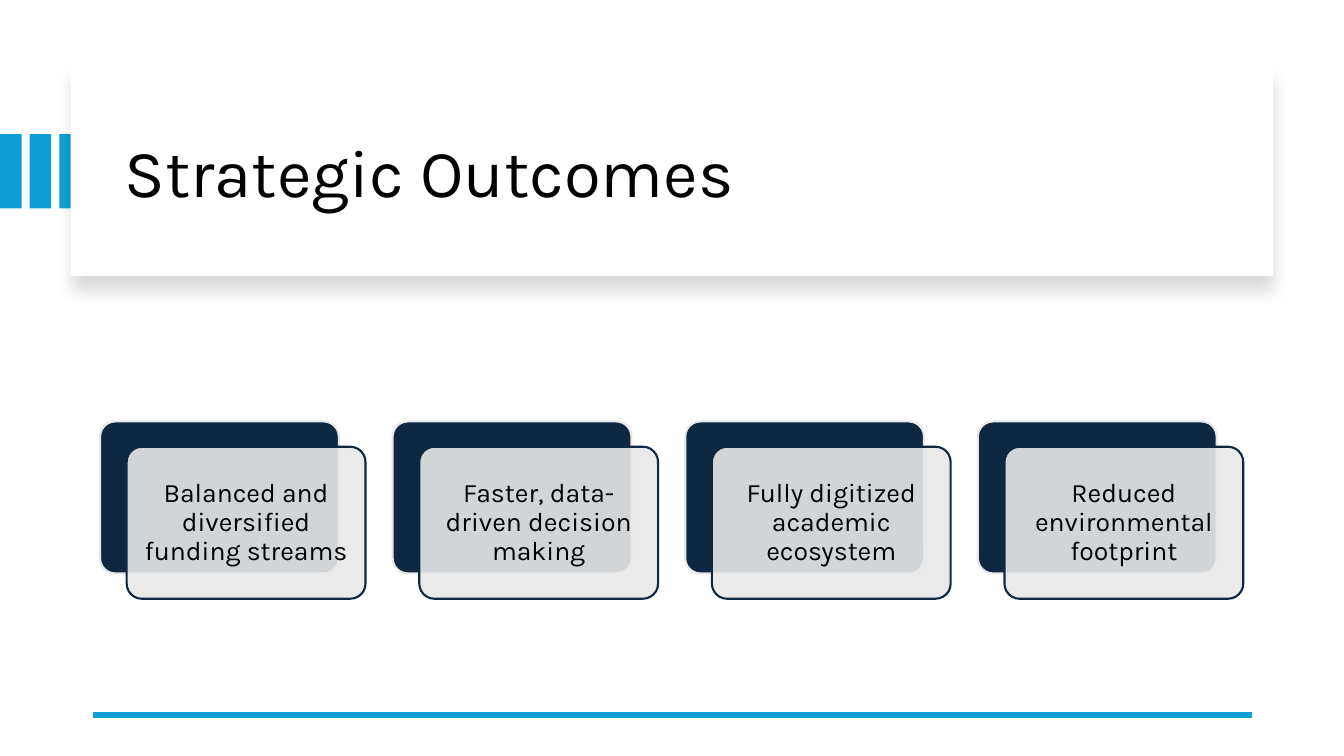
"""Build the Strategic Outcomes slide with four layered cards."""
from lxml.etree import SubElement
from pptx import Presentation
from pptx.dml.color import RGBColor
from pptx.enum.shapes import MSO_CONNECTOR, MSO_SHAPE
from pptx.enum.text import MSO_ANCHOR, PP_ALIGN
from pptx.oxml import parse_xml
from pptx.oxml.ns import nsdecls, qn
from pptx.util import Pt

TITLE = "Strategic Outcomes"
OUTCOMES = [
    "Balanced and diversified funding streams",
    "Faster, data-driven decision making",
    "Fully digitized academic ecosystem",
    "Reduced environmental footprint",
]

FONT = "Karla"
BLACK = RGBColor(0x00, 0x00, 0x00)
WHITE = RGBColor(0xFF, 0xFF, 0xFF)
BLUE = RGBColor(0x0F, 0x9E, 0xD5)
NAVY = RGBColor(0x0E, 0x28, 0x41)
GREY = RGBColor(0xE8, 0xE8, 0xE8)

STRIPE_COUNT, STRIPE_PITCH = 3, 21.2
CARD_LEFT, CARD_TOP, CARD_PITCH = 71.5, 301, 209
CARD_WIDTH, CARD_HEIGHT = 170.6, 108.6
FRONT_SHIFT_X, FRONT_SHIFT_Y = 19, 18.1
PANEL_SHADOW = (
    f'<a:effectLst {nsdecls("a")}>'
    f'<a:outerShdw blurRad="{Pt(11)}" dist="{Pt(10)}" dir="5400000" algn="t" rotWithShape="0">'
    '<a:srgbClr val="000000"><a:alpha val="15000"/></a:srgbClr>'
    "</a:outerShdw></a:effectLst>"
)


def add_box(slide, kind, left, top, width, height, fill, line=None):
    shape = slide.shapes.add_shape(kind, Pt(left), Pt(top), Pt(width), Pt(height))
    shape.shadow.inherit = False
    shape.fill.solid()
    shape.fill.fore_color.rgb = fill
    if line is None:
        shape.line.fill.background()
    else:
        shape.line.color.rgb = line
        shape.line.width = Pt(1.5)
    return shape


def set_text(shape, text, size, alignment):
    frame = shape.text_frame
    frame.text = text
    frame.word_wrap = True
    frame.vertical_anchor = MSO_ANCHOR.MIDDLE
    paragraph = frame.paragraphs[0]
    paragraph.alignment = alignment
    paragraph.line_spacing = 0.9
    font = paragraph.runs[0].font
    font.name = FONT
    font.size = Pt(size)
    font.color.rgb = BLACK


def add_header(slide):
    for index in range(STRIPE_COUNT):
        add_box(slide, MSO_SHAPE.RECTANGLE, index * STRIPE_PITCH, 95.8, 15.4, 53, BLUE)
    panel = add_box(slide, MSO_SHAPE.RECTANGLE, 50.5, 48.2, 858.8, 149, WHITE)
    properties = panel._element.spPr
    properties.replace(properties.find(qn("a:effectLst")), parse_xml(PANEL_SHADOW))

    title = slide.shapes.title
    title.left, title.top, title.width, title.height = Pt(82), Pt(64), Pt(801.4), Pt(122.4)
    set_text(title, TITLE, 48, PP_ALIGN.LEFT)
    panel._element.addnext(title._element)


def add_card(slide, left, text):
    size = (CARD_WIDTH, CARD_HEIGHT)
    back = add_box(slide, MSO_SHAPE.ROUNDED_RECTANGLE, left, CARD_TOP, *size, NAVY, GREY)
    front = add_box(slide, MSO_SHAPE.ROUNDED_RECTANGLE, left + FRONT_SHIFT_X,
                    CARD_TOP + FRONT_SHIFT_Y, *size, GREY, NAVY)
    for card in (back, front):
        card.adjustments[0] = 0.1
    color = front._element.spPr.find(qn("a:solidFill")).find(qn("a:srgbClr"))
    SubElement(color, qn("a:alpha"), val="90000")
    frame = front.text_frame
    frame.margin_left = frame.margin_right = frame.margin_top = frame.margin_bottom = Pt(6)
    set_text(front, text, 19, PP_ALIGN.CENTER)


def main():
    presentation = Presentation()
    presentation.slide_width, presentation.slide_height = Pt(960), Pt(540)
    slide = presentation.slides.add_slide(presentation.slide_layouts[5])
    add_header(slide)

    rule = slide.shapes.add_connector(MSO_CONNECTOR.STRAIGHT, Pt(66.2), Pt(510.5), Pt(894.2), Pt(510.5))
    rule.line.color.rgb = BLUE
    rule.line.width = Pt(4.5)
    SubElement(rule._element.spPr, qn("a:effectLst"))

    for index, outcome in enumerate(OUTCOMES):
        add_card(slide, CARD_LEFT + index * CARD_PITCH, outcome)
    presentation.save("out.pptx")


if __name__ == "__main__":
    main()
